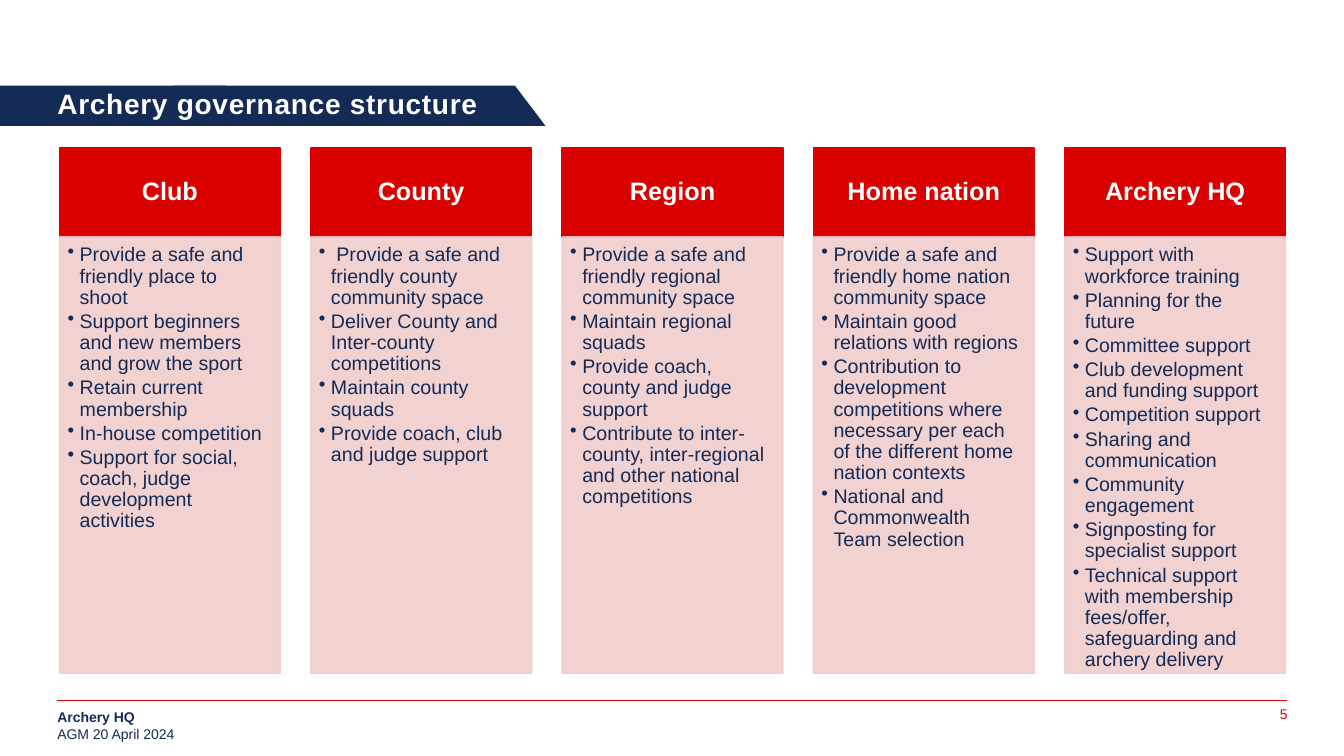
"""Build the archery governance structure slide with five columns of duties."""
from dataclasses import dataclass

import pptx
import pptx.dml.color
import pptx.enum.shapes
import pptx.enum.text
import pptx.oxml.ns
import pptx.util
from lxml import etree

TITLE = "Archery governance structure"
FOOTER = [("Archery HQ", True), ("AGM 20 April 2024", False)]
PAGE_NUMBER = "5"
LEVELS = {
    "Club": [
        "Provide a safe and friendly place to shoot",
        "Support beginners and new members and grow the sport",
        "Retain current membership",
        "In-house competition",
        "Support for social, coach, judge development activities",
    ],
    "County": [
        " Provide a safe and friendly county community space",
        "Deliver County and Inter-county competitions",
        "Maintain county squads",
        "Provide coach, club and judge support",
    ],
    "Region": [
        "Provide a safe and friendly regional community space",
        "Maintain regional squads",
        "Provide coach, county and judge support",
        "Contribute to inter-county, inter-regional and other national competitions",
    ],
    "Home nation": [
        "Provide a safe and friendly home nation community space",
        "Maintain good relations with regions",
        "Contribution to development competitions where necessary per each "
        "of the different home nation contexts",
        "National and Commonwealth Team selection",
    ],
    "Archery HQ": [
        "Support with workforce training",
        "Planning for the future",
        "Committee support",
        "Club development and funding support",
        "Competition support",
        "Sharing and communication",
        "Community engagement",
        "Signposting for specialist support",
        "Technical support with membership fees/offer, safeguarding and archery delivery",
    ],
}


@dataclass(frozen=True)
class Theme:
    font: str = "Arial"
    navy: str = "142B55"
    red: str = "DB0000"
    pink: str = "F1CCCC"
    white: str = "FFFFFF"
    title: int = 20
    heading: int = 18
    body: int = 14
    small: int = 10


THEME = Theme()
SHAPES = pptx.enum.shapes.MSO_SHAPE
ALIGN = pptx.enum.text.PP_ALIGN
ANCHOR = pptx.enum.text.MSO_ANCHOR
Inches = pptx.util.Inches
Pt = pptx.util.Pt

WIDTH, HEIGHT = 13.33, 7.5
LEFT, COLUMN, PITCH = 0.59, 2.19, 2.4925
HEAD_TOP, HEAD_HEIGHT, BODY_HEIGHT = 1.47, 0.88, 4.33
BAND_TOP, BAND_HEIGHT = 0.85, 0.4
RULE_LEFT, RULE_RIGHT, RULE_TOP = 0.57, 12.76, 6.95
INDENT = 0.12


def color(code):
    return pptx.dml.color.RGBColor.from_string(code)


def style(para, size, code, bold=False):
    para.font.name = THEME.font
    para.font.size = Pt(size)
    para.font.bold = bold
    para.font.color.rgb = color(code)


def set_frame(box, insets, anchor=ANCHOR.TOP):
    frame = box.text_frame
    frame.word_wrap = True
    frame.vertical_anchor = anchor
    frame.margin_left, frame.margin_top, frame.margin_right, frame.margin_bottom = map(Inches, insets)
    return frame


def add_block(page, kind, place, code, outlined=False):
    box = page.shapes.add_shape(kind, *map(Inches, place))
    box.shadow.inherit = False
    box.fill.solid()
    box.fill.fore_color.rgb = color(code)
    if outlined:
        box.line.color.rgb = color(code)
        box.line.width = Pt(1)
    else:
        box.line.fill.background()
    return box


def add_label(page, place):
    box = page.shapes.add_textbox(*map(Inches, place))
    return set_frame(box, (0.1, 0.05, 0.1, 0.05))


def add_bullet(para):
    properties = para._p.get_or_add_pPr()
    properties.set("marL", str(Inches(INDENT)))
    properties.set("indent", str(-Inches(INDENT)))
    etree.SubElement(properties, pptx.oxml.ns.qn("a:buChar")).set("char", "•")


def add_column(page, left, heading, duties):
    head = add_block(page, SHAPES.RECTANGLE, (left, HEAD_TOP, COLUMN, HEAD_HEIGHT), THEME.red, True)
    para = set_frame(head, (0.14, 0.08, 0.14, 0.08), ANCHOR.MIDDLE).paragraphs[0]
    para.text = heading
    para.alignment = ALIGN.CENTER
    para.line_spacing = 0.9
    style(para, THEME.heading, THEME.white, True)

    place = (left, HEAD_TOP + HEAD_HEIGHT, COLUMN, BODY_HEIGHT)
    body = add_block(page, SHAPES.RECTANGLE, place, THEME.pink, True)
    for tone in body._element.spPr.iter(pptx.oxml.ns.qn("a:srgbClr")):
        etree.SubElement(tone, pptx.oxml.ns.qn("a:alpha")).set("val", "90000")
    frame = set_frame(body, (0.08, 0.08, 0.11, 0.12))
    for index, duty in enumerate(duties):
        para = frame.add_paragraph() if index else frame.paragraphs[0]
        para.text = duty
        para.alignment = ALIGN.LEFT
        para.line_spacing = 0.9
        para.space_after = Pt(0.15 * THEME.body)
        add_bullet(para)
        style(para, THEME.body, THEME.navy)


def add_title(page):
    slant = add_block(page, SHAPES.PARALLELOGRAM, (1.72, BAND_TOP, 3.69, BAND_HEIGHT), THEME.navy)
    slant.adjustments[0] = 0.758
    slant._element.spPr.xfrm.set("flipV", "1")
    add_block(page, SHAPES.RECTANGLE, (0, BAND_TOP, 2.24, BAND_HEIGHT), THEME.navy)
    para = add_label(page, (0.47, BAND_TOP, 12.29, 0.39)).paragraphs[0]
    span = para.add_run()
    span.text = TITLE
    span._r.get_or_add_rPr().set("spc", "50")
    para.line_spacing = 0.9
    style(para, THEME.title, THEME.white, True)


def add_footer(page):
    ends = (RULE_LEFT, RULE_TOP, RULE_RIGHT, RULE_TOP)
    rule = page.shapes.add_connector(pptx.enum.shapes.MSO_CONNECTOR.STRAIGHT, *map(Inches, ends))
    rule.line.color.rgb = color(THEME.red)
    rule.line.width = Pt(0.5)
    etree.SubElement(rule._element.spPr, pptx.oxml.ns.qn("a:effectLst"))

    number = add_label(page, (9.87, RULE_TOP, 3, 0.4)).paragraphs[0]
    number.text = PAGE_NUMBER
    number.alignment = ALIGN.RIGHT
    style(number, THEME.small, THEME.red)

    frame = add_label(page, (0.47, 6.98, 4.26, 0.44))
    for index, (text, bold) in enumerate(FOOTER):
        para = frame.add_paragraph() if index else frame.paragraphs[0]
        para.text = text
        style(para, THEME.small, THEME.navy, bold)


def main():
    deck = pptx.Presentation()
    deck.slide_width, deck.slide_height = Inches(WIDTH), Inches(HEIGHT)
    page = deck.slides.add_slide(deck.slide_layouts[6])
    for index, (heading, duties) in enumerate(LEVELS.items()):
        add_column(page, LEFT + index * PITCH, heading, duties)
    add_title(page)
    add_footer(page)
    deck.save("out.pptx")


if __name__ == "__main__":
    main()
